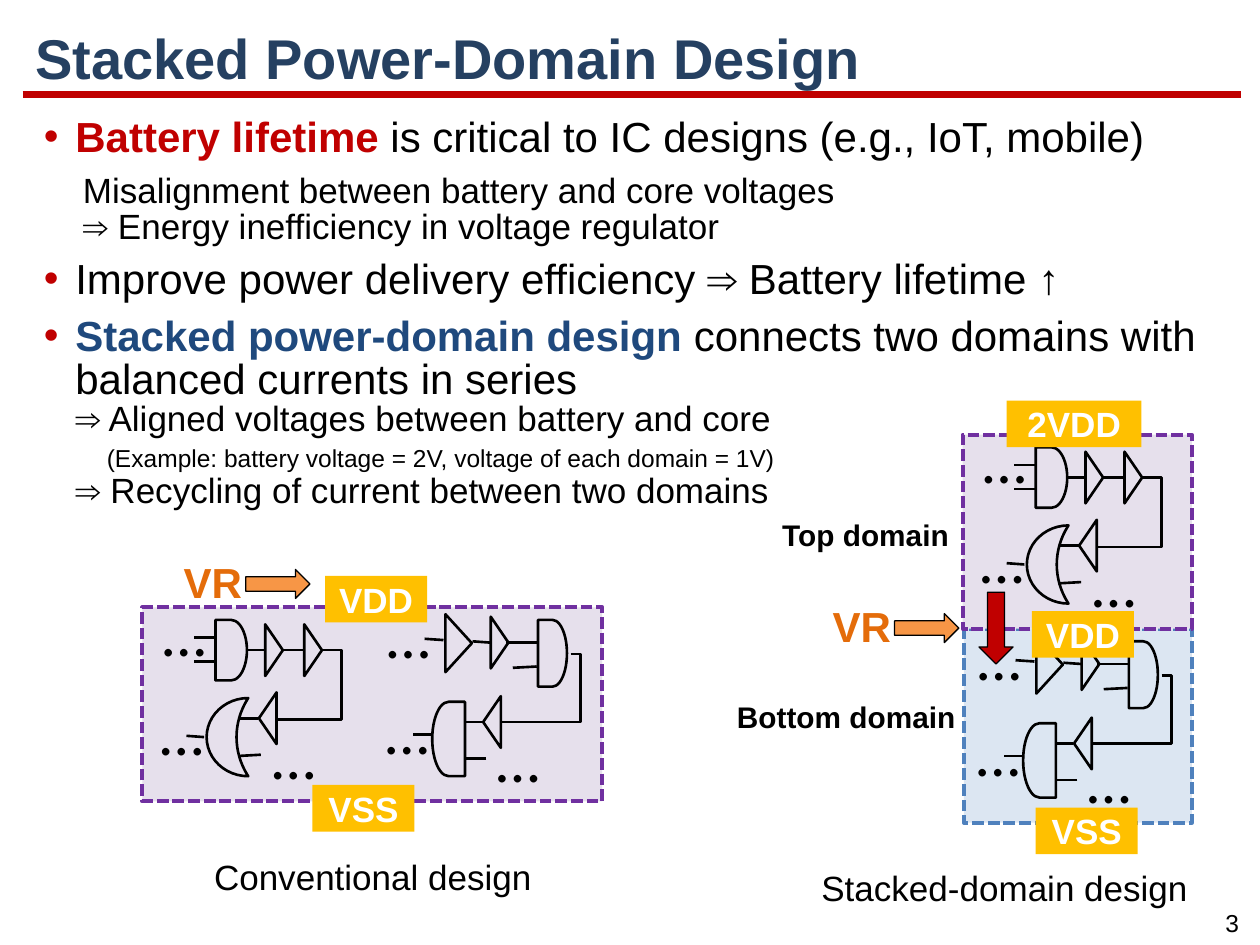
import lxml.etree
import pptx
import pptx.dml.color
import pptx.enum.dml
import pptx.enum.shapes
import pptx.enum.text
import pptx.oxml.ns
import pptx.util

Inches = pptx.util.Inches
Pt = pptx.util.Pt
SHAPE = pptx.enum.shapes.MSO_SHAPE
CONNECTOR = pptx.enum.shapes.MSO_CONNECTOR
ALIGN = pptx.enum.text.PP_ALIGN
ANCHOR = pptx.enum.text.MSO_ANCHOR

COLORS = {
    "black": "000000", "white": "FFFFFF", "red": "C00000", "navy": "254061",
    "blue": "1F497D", "orange": "F79646", "dark_orange": "E46C0A",
    "gold": "FFC000", "lilac": "E6E0EC", "purple": "7030A0",
    "pale_blue": "DCE6F2", "mid_blue": "4F81BD",
}

FORMATS = {
    "title": {"size": Pt(32), "bold": True, "color": "navy"},
    "point": {"size": Pt(24)},
    "red_point": {"size": Pt(24), "bold": True, "color": "red"},
    "blue_point": {"size": Pt(24), "bold": True, "color": "blue"},
    "detail": {"size": Pt(20)},
    "example": {"size": Pt(14)},
    "domain": {"size": Pt(17), "bold": True},
    "rail": {"size": Pt(20), "bold": True, "color": "white"},
    "regulator": {"size": Pt(24), "bold": True, "color": "dark_orange"},
    "dots": {"size": Pt(36), "name": "Calibri"},
}

BODY = [
    (0.25, -0.25, [("Battery lifetime ", "red_point"),
                   ("is critical to IC designs (e.g., IoT, mobile)", "point")]),
    (0.31, 0, [("Misalignment between battery and core voltages \n"
                "⇒ Energy inefficiency in voltage regulator", "detail")]),
    (0.25, -0.25, [("Improve power delivery efficiency ⇒ Battery lifetime ↑", "point")]),
    (0.25, -0.25, [("Stacked power-domain design ", "blue_point"),
                   ("connects two domains with balanced currents in series \n", "point"),
                   ("⇒ Aligned voltages between battery and core\n\t", "detail"),
                   ("(Example: battery voltage = 2V, voltage of each domain = 1V)\n", "example"),
                   ("⇒ Recycling of current between two domains", "detail")]),
]

OR_CIRCUIT = {
    "gates": [
        (SHAPE.FLOWCHART_DELAY, 0.58, 0.1, 0.25, 0.48, 0),
        (SHAPE.ISOSCELES_TRIANGLE, 0.84, 0.27, 0.41, 0.14, 90),
        (SHAPE.ISOSCELES_TRIANGLE, 1.15, 0.27, 0.41, 0.14, 90),
        (SHAPE.ISOSCELES_TRIANGLE, 0.79, 0.81, 0.41, 0.14, 270),
        (SHAPE.MOON, 0.51, 0.72, 0.33, 0.62, 0),
    ],
    "wires": [
        (0.83, 0.34, 0.97, 0.34), (1.12, 0.34, 1.29, 0.34),
        (0.92, 0.88, 0.77, 0.88), (0.94, 1.17, 0.76, 1.18),
        (0.41, 0.24, 0.58, 0.24), (0.41, 0.43, 0.58, 0.43),
        (0.35, 1.02, 0.49, 1.03),
    ],
    "loop": (1.43, 0.34, 1.07, 0.89),
    "bend": -41600,
    "dots": [(0.06, -0.16), (0.04, 0.63), (0.93, 0.82)],
}

AND_CIRCUIT = {
    "gates": [
        (SHAPE.ISOSCELES_TRIANGLE, 0.45, 0.18, 0.46, 0.21, 90),
        (SHAPE.ISOSCELES_TRIANGLE, 0.8, 0.21, 0.41, 0.14, 90),
        (SHAPE.FLOWCHART_DELAY, 1.31, 0.1, 0.23, 0.53, 0),
        (SHAPE.ISOSCELES_TRIANGLE, 0.74, 0.84, 0.41, 0.14, 270),
        (SHAPE.FLOWCHART_DELAY, 0.47, 0.75, 0.26, 0.59, 180),
    ],
    "wires": [
        (0.79, 0.27, 0.93, 0.28), (1.06, 0.28, 1.31, 0.28),
        (0.87, 0.91, 0.72, 0.91), (0.9, 1.2, 0.72, 1.2),
        (0.41, 0.25, 0.56, 0.26), (1.3, 0.47, 1.11, 0.48),
        (0.32, 1.01, 0.46, 1.01),
    ],
    "loop": (1.57, 0.37, 1.02, 0.91),
    "bend": -14000,
    "dots": [(0.01, -0.14), (0, 0.62), (0.88, 0.84)],
}


def rgb(name):
    """Return the named colour."""
    return pptx.dml.color.RGBColor.from_string(COLORS[name])


def add_span(para, text, style):
    """Add text in a named format, with a line break at each newline."""
    values = {"name": "Arial", "bold": False, "color": "black", **FORMATS[style]}
    color = values.pop("color")
    for index, line in enumerate(text.split("\n")):
        if index:
            para.add_line_break()
        if line:
            span = para.add_run()
            span.text = line
            for key, value in values.items():
                setattr(span.font, key, value)
            span.font.color.rgb = rgb(color)


def add_label(page, box, text, style, align=ALIGN.LEFT, wrap=True):
    """Place a line of text in the box."""
    frame = page.shapes.add_textbox(*map(Inches, box)).text_frame
    frame.word_wrap = wrap
    frame.paragraphs[0].alignment = align
    add_span(frame.paragraphs[0], text, style)


def add_figure(page, kind, box, fill=None, line=None, width=1.5, turn=0):
    """Place a preset shape with the given fill, line and rotation."""
    figure = page.shapes.add_shape(kind, *map(Inches, box))
    figure.shadow.inherit = False
    figure.rotation = turn
    for part, color in ((figure.fill, fill), (figure.line.fill, line)):
        if color:
            part.solid()
            part.fore_color.rgb = rgb(color)
        else:
            part.background()
    if line:
        figure.line.width = Pt(width)
    return figure


def add_wire(page, points, color="black", width=1.5, bend=None):
    """Draw a straight wire, or an elbow wire when a bend is given."""
    kind = CONNECTOR.STRAIGHT if bend is None else CONNECTOR.ELBOW
    wire = page.shapes.add_connector(kind, *map(Inches, points))
    wire.line.color.rgb = rgb(color)
    wire.line.width = Pt(width)
    qn = pptx.oxml.ns.qn
    properties = wire.element.spPr
    lxml.etree.SubElement(properties, qn("a:effectLst"))
    if bend is not None:
        guides = properties.find(qn("a:prstGeom")).find(qn("a:avLst"))
        lxml.etree.SubElement(guides, qn("a:gd"), name="adj1", fmla=f"val {bend}")


def add_domain(page, box, fill, line):
    """Draw the dashed frame of a power domain."""
    frame = add_figure(page, SHAPE.RECTANGLE, box, fill, line, 2.25)
    frame.line.dash_style = pptx.enum.dml.MSO_LINE.SQUARE_DOT


def add_circuit(page, left, top, circuit):
    """Draw a gate circuit from its top left corner."""
    for kind, x, y, width, height, turn in circuit["gates"]:
        gate = add_figure(page, kind, (left + x, top + y, width, height), line="black", turn=turn)
        if kind == SHAPE.MOON:
            gate.adjustments[0] = 0.72
    corner = (left, top, left, top)
    for points in circuit["wires"]:
        add_wire(page, [a + b for a, b in zip(corner, points)])
    add_wire(page, [a + b for a, b in zip(corner, circuit["loop"])], bend=circuit["bend"])
    for x, y in circuit["dots"]:
        add_label(page, (left + x, top + y, 0.4, 0.58), "…", "dots")


def add_rail(page, box, text):
    """Place the gold name plate of a supply rail."""
    frame = add_figure(page, SHAPE.RECTANGLE, box, "gold").text_frame
    frame.vertical_anchor = ANCHOR.MIDDLE
    frame.paragraphs[0].alignment = ALIGN.CENTER
    add_span(frame.paragraphs[0], text, "rail")


def add_regulator(page, left, top):
    """Place the VR label and the arrow it feeds."""
    add_figure(page, SHAPE.RIGHT_ARROW, (left + 0.59, top + 0.15, 0.51, 0.23),
               "orange", "black", 0.75)
    add_label(page, (left, top, 0.67, 0.42), "VR", "regulator")


def add_heading(page, box):
    """Format the title, its rule and the page number."""
    title = page.shapes.title
    for key, value in zip(("left", "top", "width", "height"), box):
        setattr(title, key, Inches(value))
    frame = title.text_frame
    frame.auto_size = pptx.enum.text.MSO_AUTO_SIZE.NONE
    frame.vertical_anchor = ANCHOR.MIDDLE
    para = frame.paragraphs[0]
    para.alignment = ALIGN.LEFT
    para.line_spacing = 0.9
    add_span(para, "Stacked Power-Domain Design", "title")
    add_wire(page, (0.18, 0.75, 9.85, 0.75), "red", 4.5)
    add_label(page, (9.56, 7.16, 0.44, 0.34), "3", "example", ALIGN.CENTER, False)


def add_body(page, box):
    """Write the points, with red bullets on those that hang."""
    frame = page.shapes.add_textbox(*map(Inches, box)).text_frame
    frame.word_wrap = True
    qn = pptx.oxml.ns.qn
    for index, (margin, indent, spans) in enumerate(BODY):
        para = frame.add_paragraph() if index else frame.paragraphs[0]
        para.line_spacing = 0.85
        para.space_before = Pt(8)
        properties = para._p.get_or_add_pPr()
        properties.set("marL", str(Inches(margin)))
        properties.set("indent", str(Inches(indent)))
        if indent:
            color = lxml.etree.SubElement(properties, qn("a:buClr"))
            lxml.etree.SubElement(color, qn("a:srgbClr"), val=COLORS["red"])
            lxml.etree.SubElement(properties, qn("a:buFont"), typeface="Arial")
            lxml.etree.SubElement(properties, qn("a:buChar"), char="•")
        for text, style in spans:
            add_span(para, text, style)


def add_conventional(page, left, top):
    """Draw the conventional design with both circuits in one domain."""
    add_domain(page, (left, top, 3.65, 1.54), "lilac", "purple")
    add_circuit(page, left, top, OR_CIRCUIT)
    add_circuit(page, left + 1.83, top, AND_CIRCUIT)
    add_regulator(page, left + 0.23, top - 0.45)
    add_rail(page, (left + 1.45, top - 0.25, 0.81, 0.37), "VDD")
    add_rail(page, (left + 1.35, top + 1.41, 0.81, 0.37), "VSS")
    add_label(page, (left + 0.47, top + 1.92, 2.85, 0.44), "Conventional design", "detail")


def add_stacked(page, left, top):
    """Draw the stacked design with one circuit in each domain."""
    middle = top + 1.54
    add_domain(page, (left + 0.01, middle, 1.81, 1.54), "pale_blue", "mid_blue")
    add_circuit(page, left + 0.01, middle, AND_CIRCUIT)
    add_domain(page, (left, top, 1.82, 1.54), "lilac", "purple")
    add_circuit(page, left, top, OR_CIRCUIT)
    add_label(page, (left - 1.53, top + 0.6, 1.66, 0.67), "Top domain", "domain")
    add_label(page, (left - 1.89, top + 2.05, 2.12, 0.39), "Bottom domain", "domain")
    add_rail(page, (left + 0.35, top - 0.27, 1.07, 0.37), "2VDD")
    add_rail(page, (left + 0.55, middle - 0.14, 0.81, 0.37), "VDD")
    add_rail(page, (left + 0.58, middle + 1.42, 0.81, 0.37), "VSS")
    add_figure(page, SHAPE.RIGHT_ARROW, (left - 0.02, middle - 0.14, 0.57, 0.27),
               "red", "black", 0.75, 90)
    add_label(page, (left - 1.22, top + 3.38, 3.15, 0.44), "Stacked-domain design", "detail")
    add_regulator(page, left - 1.13, middle - 0.27)


def main():
    """Build the deck and save it."""
    deck = pptx.Presentation()
    deck.slide_width, deck.slide_height = Inches(10), Inches(7.5)
    page = deck.slides.add_slide(deck.slide_layouts.get_by_name("Title Only"))
    add_heading(page, (0.18, 0.16, 9.68, 0.65))
    add_body(page, (0.25, 0.89, 9.5, 3.24))
    add_conventional(page, 1.13, 4.82)
    add_stacked(page, 7.64, 3.45)
    deck.save("out.pptx")


if __name__ == "__main__":
    main()
